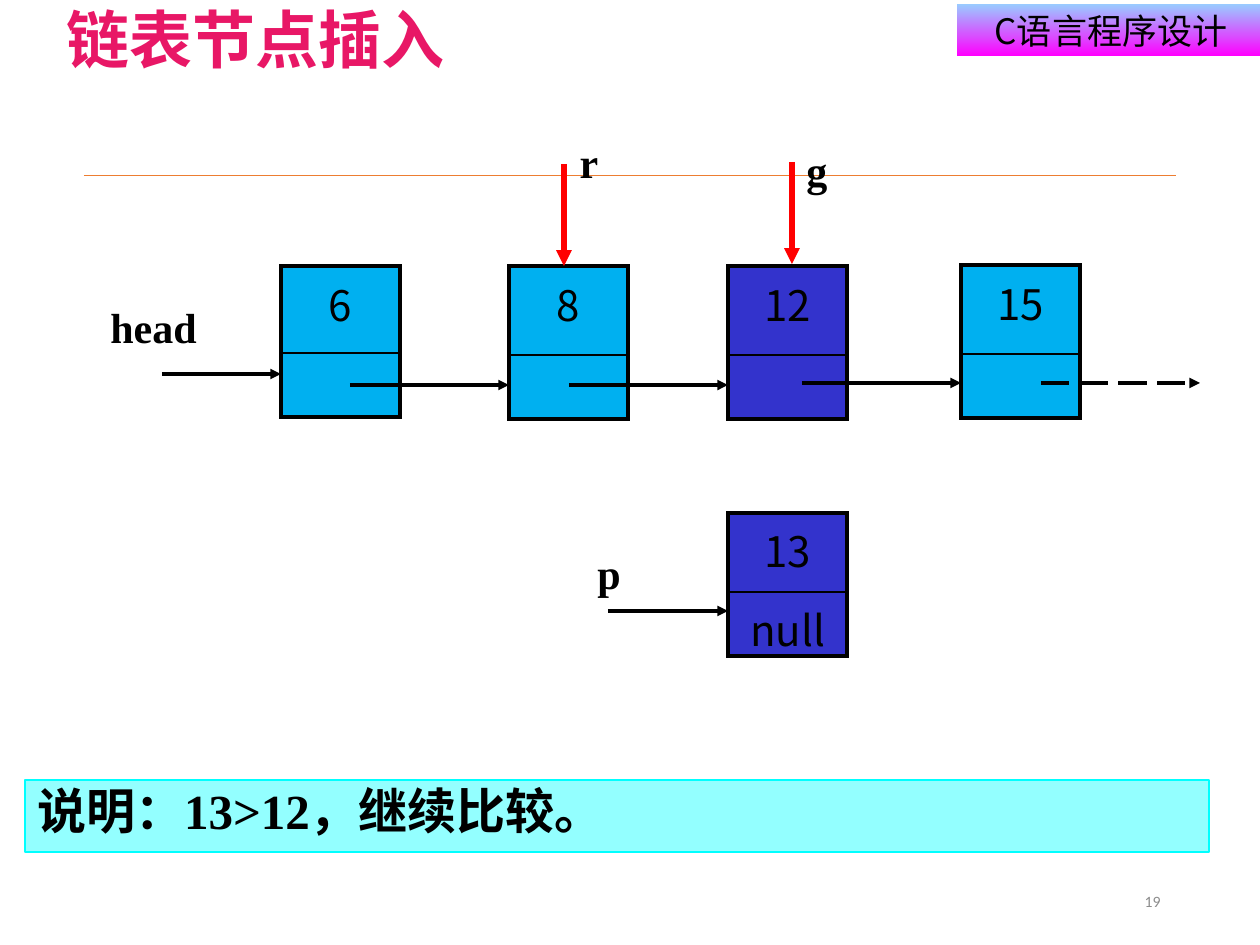
import pptx
import pptx.dml.color
import pptx.enum.dml
import pptx.enum.shapes
import pptx.enum.text
import pptx.oxml.ns
import pptx.util
from lxml import etree

PX = 914400 / 126
SLIDE = (1260, 945)
SANS, SERIF = "Noto Sans CJK SC", "Times New Roman"
COLOURS = {
    "black": "000000", "title": "E81766", "tag_top": "99CCFF", "tag_bottom": "FF00FF",
    "rule": "ED7D31", "node": "00B0F0", "active": "3333CC", "pointer": "FF0000",
    "note": "66FFFF", "note_edge": "00FFFF", "number": "8C8C8C",
}
ALIGN = pptx.enum.text.PP_ALIGN
ANCHOR = pptx.enum.text.MSO_ANCHOR

TITLE = "链表节点插入"
TAG = "C语言程序设计"
NOTE = "说明：13>12，继续比较。"
NODE_WIDTH = 119
# left, top, row heights, cell texts, fill, opacity in percent
NODES = [
    (281, 266, (87, 64), ("6", ""), "node", 100),
    (509, 266, (89, 64), ("8", ""), "node", 100),
    (728, 266, (89, 64), ("12", ""), "active", 50),
    (961, 265, (89, 64), ("15", ""), "node", 100),
    (728, 513, (79, 64), ("13", "null"), "active", 50),
]
LABELS = [  # text, left, top, alignment
    ("head", 98, 291, ALIGN.LEFT),
    ("p", 544, 537, ALIGN.CENTER),
    ("g", 752, 134, ALIGN.CENTER),
    ("r", 524, 126, ALIGN.CENTER),
]
ARROWS = [  # start, end, colour, width, dashed
    ((162, 374), (281, 374), "black", 2, False),
    ((350, 385), (509, 385), "black", 2, False),
    ((569, 385), (728, 385), "black", 2, False),
    ((802, 383), (961, 383), "black", 2, False),
    ((1041, 383), (1200, 383), "black", 2, True),
    ((608, 611), (728, 611), "black", 2, False),
    ((564, 164), (564, 266), "pointer", 3, False),
    ((792, 162), (792, 264), "pointer", 3, False),
]


def emu(*lengths):
    return [round(length * PX) for length in lengths]


def rgb(name):
    return pptx.dml.color.RGBColor.from_string(COLOURS[name])


def add_element(parent, tag, **attributes):
    return etree.SubElement(parent, pptx.oxml.ns.qn(tag), attributes)


def write_text(frame, text, size=24, font=SANS, east_asian=SANS, colour="black",
               bold=False, align=ALIGN.LEFT):
    para = frame.paragraphs[0]
    para.alignment = align
    span = para.add_run()
    span.text = text
    span.font.size = pptx.util.Pt(size)
    span.font.bold = bold
    span.font.color.rgb = rgb(colour)
    span.font.name = font
    add_element(span.font._element, "a:ea", typeface=east_asian)


def fill_solid(fill, colour, opacity=100):
    fill.solid()
    fill.fore_color.rgb = rgb(colour)
    if opacity < 100:
        colour_element = fill._xPr.find(".//" + pptx.oxml.ns.qn("a:srgbClr"))
        add_element(colour_element, "a:alpha", val=str(opacity * 1000))


def add_box(page, left, top, width, height):
    box = page.shapes.add_textbox(*emu(left, top, width, height))
    box.text_frame.word_wrap = True
    return box


def add_rectangle(page, left, top, width, height):
    shape = page.shapes.add_shape(pptx.enum.shapes.MSO_SHAPE.RECTANGLE,
                                  *emu(left, top, width, height))
    shape.shadow.inherit = False
    shape.text_frame.word_wrap = True
    return shape


def add_line(page, start, end, colour, width):
    line = page.shapes.add_connector(pptx.enum.shapes.MSO_CONNECTOR.STRAIGHT,
                                     *emu(*start, *end))
    line.line.color.rgb = rgb(colour)
    line.line.width = pptx.util.Pt(width)
    add_element(line._element.spPr, "a:effectLst")
    return line


def add_arrow(page, start, end, colour, width, dashed):
    arrow = add_line(page, start, end, colour, width)
    if dashed:
        arrow.line.dash_style = pptx.enum.dml.MSO_LINE.LONG_DASH
    add_element(arrow.line._get_or_add_ln(), "a:tailEnd", type="triangle")


def set_borders(cell, **widths):
    """Draw black cell borders; widths are in points, keyed L, R, T, B."""
    properties = cell._tc.get_or_add_tcPr()
    for side, width in widths.items():
        border = add_element(properties, "a:ln" + side, w=str(pptx.util.Pt(width)))
        solid = add_element(border, "a:solidFill")
        add_element(solid, "a:srgbClr", val=COLOURS["black"])


def add_node(page, left, top, heights, texts, colour, opacity):
    """Draw a list node: a value cell above a next-pointer cell."""
    frame = page.shapes.add_table(2, 1, *emu(left, top, NODE_WIDTH, sum(heights)))
    table = frame.table
    table.first_row = table.horz_banding = False
    for index, (height, text) in enumerate(zip(heights, texts)):
        table.rows[index].height = emu(height)[0]
        cell = table.cell(index, 0)
        upper, lower = ((2.25, 1), (1, 2.25))[index]
        set_borders(cell, L=2.25, R=2.25, T=upper, B=lower)
        fill_solid(cell.fill, colour, opacity)
        if text:
            write_text(cell.text_frame, text, align=ALIGN.CENTER)
        if index:
            cell.margin_bottom = 0


def add_title(page):
    title = page.shapes.title
    title.left, title.top, title.width, title.height = emu(25, 0, 461, 52)
    frame = title.text_frame
    frame.auto_size = pptx.enum.text.MSO_AUTO_SIZE.NONE
    frame.word_wrap = False
    frame.vertical_anchor = ANCHOR.TOP
    frame.margin_top = frame.margin_bottom = 0
    write_text(frame, TITLE, size=36, font="Noto Sans CJK JP",
               east_asian="Noto Sans CJK JP", colour="title", bold=True,
               align=ALIGN.CENTER)


def add_tag(page):
    tag = add_rectangle(page, 957, 4, 308, 52)
    tag.line.fill.background()
    tag.fill.gradient()
    tag.fill.gradient_angle = 270
    for stop, colour in zip(tag.fill.gradient_stops, ("tag_top", "tag_bottom")):
        stop.color.rgb = rgb(colour)
    tag.text_frame.vertical_anchor = ANCHOR.MIDDLE
    write_text(tag.text_frame, TAG, size=20, align=ALIGN.CENTER)


def add_note(page):
    note = add_rectangle(page, 25, 780, 1184, 72)
    fill_solid(note.fill, "note", 70)
    note.line.color.rgb = rgb("note_edge")
    note.line.width = pptx.util.Pt(1)
    note.text_frame.vertical_anchor = ANCHOR.TOP
    note.text_frame.margin_top = note.text_frame.margin_bottom = 0
    write_text(note.text_frame, NOTE, size=28, font=SERIF, bold=True)


def main():
    deck = pptx.Presentation()
    deck.slide_width, deck.slide_height = emu(*SLIDE)
    page = deck.slides.add_slide(deck.slide_layouts[5])
    add_title(page)
    add_tag(page)
    add_line(page, (84, 175), (1176, 175), "rule", 0.25)
    number = add_box(page, 890, 876, 283, 50)
    number.text_frame.vertical_anchor = ANCHOR.MIDDLE
    write_text(number.text_frame, "19", size=9, font="Calibri", colour="number",
               align=ALIGN.RIGHT)
    for node in NODES:
        add_node(page, *node)
    for text, left, top, align in LABELS:
        label = add_box(page, left, top, 130, 63)
        label.text_frame.margin_top = emu(11)[0]
        write_text(label.text_frame, text, font=SERIF, bold=True, align=align)
    add_note(page)
    for arrow in ARROWS:
        add_arrow(page, *arrow)
    deck.save("out.pptx")


if __name__ == "__main__":
    main()
